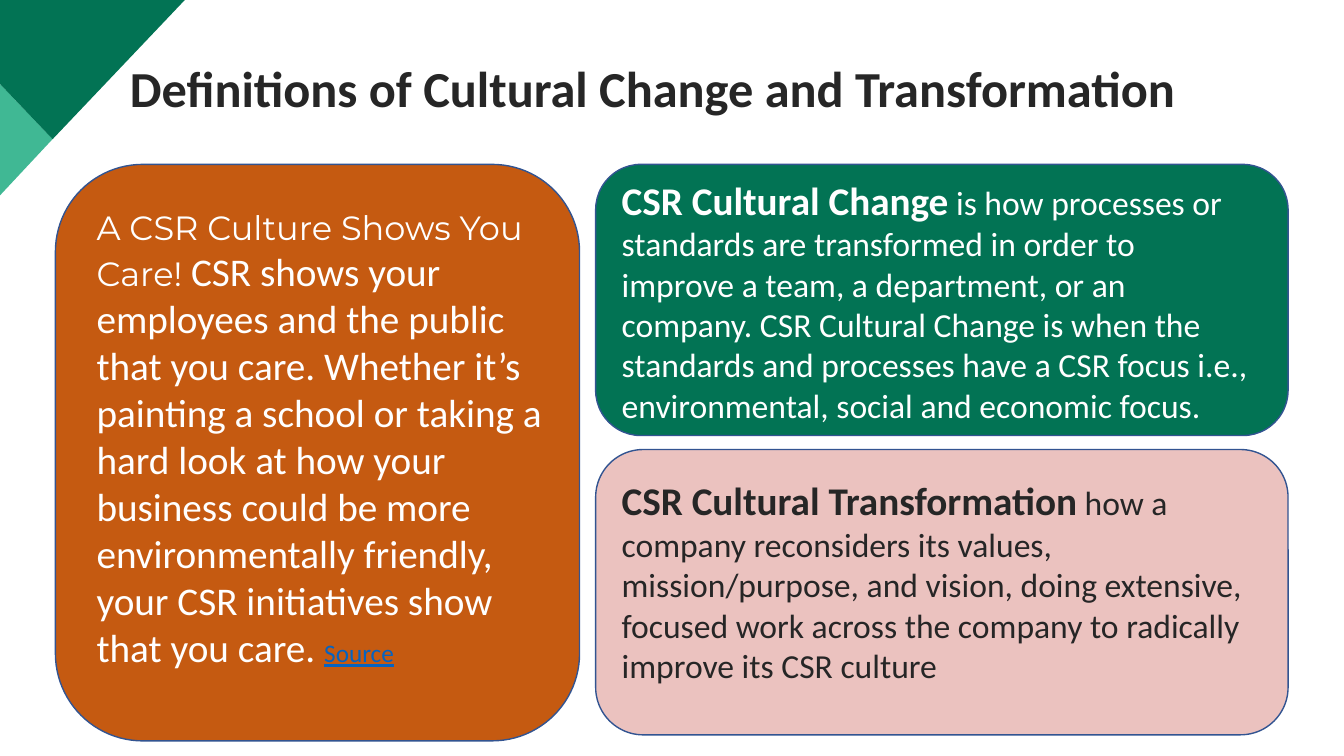
import pptx
import pptx.dml.color
import pptx.enum.shapes
import pptx.enum.text
import pptx.util

Pt = pptx.util.Pt
RGBColor = pptx.dml.color.RGBColor

GREEN = RGBColor(0x02, 0x73, 0x54)
MINT = RGBColor(0x40, 0xB8, 0x94)
ORANGE = RGBColor(0xC5, 0x5A, 0x11)
PINK = RGBColor(0xEB, 0xC2, 0xBF)
OUTLINE = RGBColor(0x32, 0x54, 0x91)
INK = RGBColor(0x26, 0x26, 0x26)
WHITE = RGBColor(0xFF, 0xFF, 0xFF)
LINK_BLUE = RGBColor(0x05, 0x63, 0xC1)

PANEL_TOP = 117.4
RIGHT_PANEL_LEFT = 425.5
RIGHT_PANEL_WIDTH = 494.6
RIGHT_TEXT_LEFT = 437


def add_run(paragraph, text, size=24, color=WHITE, font="Calibri", bold=False, underline=False):
    run = paragraph.add_run()
    run.text = text
    run.font.name = font
    run.font.size = Pt(size)
    run.font.color.rgb = color
    run.font.bold = bold
    run.font.underline = underline


class SlideBuilder:
    def __init__(self, slide, outline_color=OUTLINE, outline_width=1):
        self.slide = slide
        self.outline_color = outline_color
        self.outline_width = outline_width

    def polygon(self, points, color):
        corners = [(Pt(x), Pt(y)) for x, y in points]
        builder = self.slide.shapes.build_freeform(*corners[0])
        builder.add_line_segments(corners[1:], close=True)
        shape = builder.convert_to_shape()
        shape.shadow.inherit = False
        shape.fill.solid()
        shape.fill.fore_color.rgb = color
        shape.line.fill.background()

    def panel(self, left, top, width, height, color):
        shape = self.slide.shapes.add_shape(
            pptx.enum.shapes.MSO_SHAPE.ROUNDED_RECTANGLE,
            Pt(left), Pt(top), Pt(width), Pt(height))
        shape.shadow.inherit = False
        shape.fill.solid()
        shape.fill.fore_color.rgb = color
        shape.line.color.rgb = self.outline_color
        shape.line.width = Pt(self.outline_width)

    def text(self, left, top, width, height, runs, line_spacing=None):
        """Add one paragraph; runs is a list of (text, format) pairs."""
        box = self.slide.shapes.add_textbox(Pt(left), Pt(top), Pt(width), Pt(height))
        frame = box.text_frame
        frame.word_wrap = True
        frame.vertical_anchor = pptx.enum.text.MSO_ANCHOR.TOP
        paragraph = frame.paragraphs[0]
        paragraph.line_spacing = line_spacing
        for text, style in runs:
            add_run(paragraph, text, **style)


def main():
    presentation = pptx.Presentation()
    presentation.slide_width = Pt(960)
    presentation.slide_height = Pt(540)
    builder = SlideBuilder(presentation.slides.add_slide(presentation.slide_layouts[6]))

    builder.polygon([(0, 60), (37.6, 99.4), (0, 139.6)], MINT)
    builder.polygon([(0, 0), (132, 0), (37.6, 99.4), (0, 60)], GREEN)

    builder.text(85.7, 42.5, 834.5, 74.9, [
        ("Definitions of Cultural Change and Transformation",
         dict(size=36, color=INK, bold=True)),
    ], line_spacing=0.9)

    builder.panel(39.6, PANEL_TOP, 374.4, 411.8, ORANGE)
    builder.text(61.9, 144, 335.5, 353.5, [
        ("A CSR Culture Shows You Care! ", dict(font="Montserrat")),
        ("CSR shows your employees and the public that you care. Whether it’s painting a "
         "school or taking a hard look at how your business could be more environmentally "
         "friendly, your CSR initiatives show that you care. ", dict(size=28)),
        ("Source", dict(size=18, color=LINK_BLUE, underline=True)),
    ])

    builder.panel(RIGHT_PANEL_LEFT, PANEL_TOP, RIGHT_PANEL_WIDTH, 193.7, GREEN)
    builder.text(RIGHT_TEXT_LEFT, 122.4, 461.5, 225.4, [
        ("CSR Cultural Change", dict(size=28, bold=True)),
        (" is how processes or standards are transformed in order to improve a team, "
         "a department, or an company. CSR Cultural Change is when the standards and "
         "processes have a CSR focus i.e., environmental, social and economic focus.", {}),
    ])

    builder.panel(RIGHT_PANEL_LEFT, 321.1, RIGHT_PANEL_WIDTH, 203.8, PINK)
    builder.text(RIGHT_TEXT_LEFT, 337, 472.3, 197.3, [
        ("CSR Cultural Transformation", dict(size=28, color=INK, bold=True)),
        (" how a company reconsiders its values, mission/purpose, and vision, doing "
         "extensive, focused work across the company to radically improve its CSR culture",
         dict(color=INK)),
    ])

    presentation.save("out.pptx")


if __name__ == "__main__":
    main()
